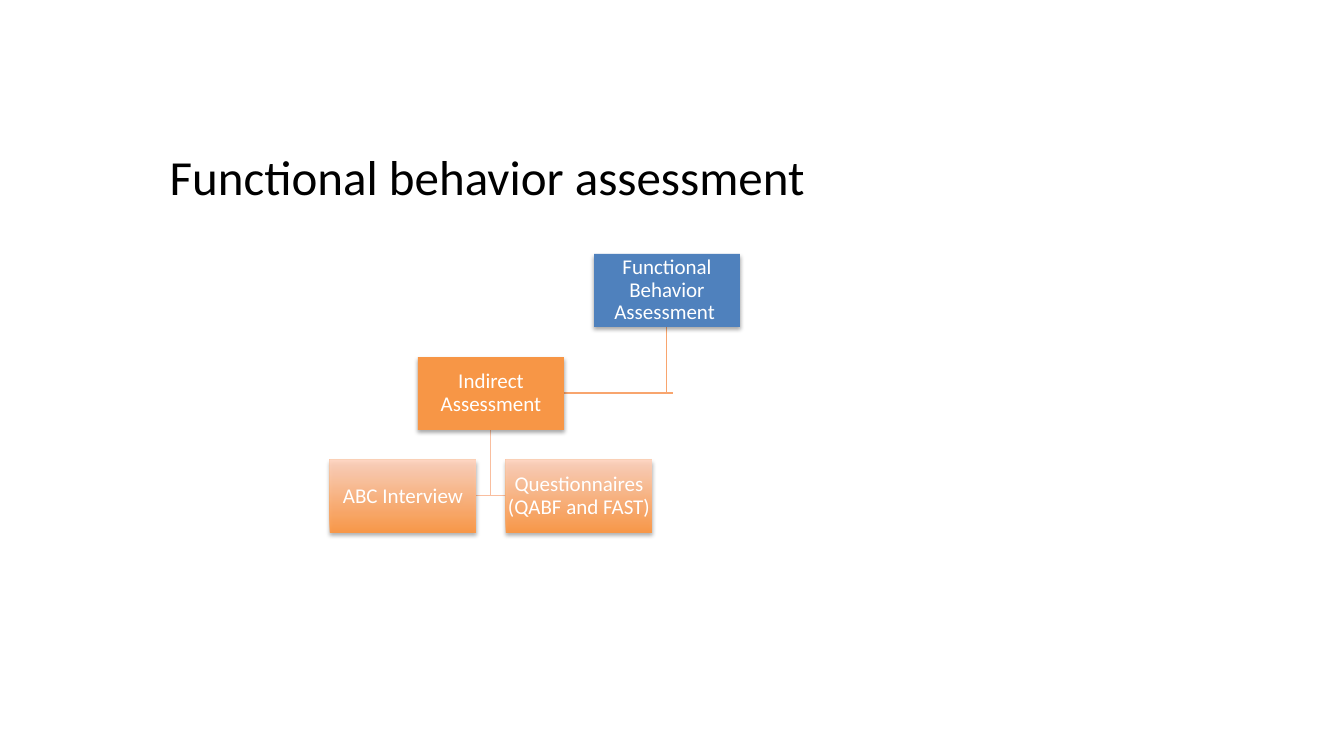
from pptx import Presentation
from pptx import util as u
from pptx.dml.color import RGBColor
from pptx.enum import shapes, text
from pptx.oxml import parse_xml
from pptx.oxml.ns import nsdecls, qn

PX = 914400 / 100.8
COLORS = {
    "title": "000000",
    "label": "FFFFFF",
    "root": "4F81BD",
    "indirect": "F79646",
    "leaf_bottom": "FF953E",
    "leaf_top": "FFD2BD",
    "root_link": "F8A56E",
    "leaf_link": "F9BE9F",
}
NODE_WIDTH, NODE_HEIGHT = 146, 73
HALF_COLUMN, LEVEL_STEP = 88, 103


def px(length):
    return u.Emu(round(length * PX))


def color(name):
    return RGBColor.from_string(COLORS[name])


def write_text(shape, words, size, color_name, anchor):
    frame = shape.text_frame
    frame.text = words
    frame.word_wrap = True
    frame.vertical_anchor = anchor
    paragraph = frame.paragraphs[0]
    paragraph.alignment = text.PP_ALIGN.CENTER
    font = paragraph.runs[0].font
    font.name, font.size = "Calibri", u.Pt(size)
    font.color.rgb = color(color_name)
    return frame


def add_title(slide, left, top, width, height):
    title = slide.shapes.add_textbox(px(left), px(top), px(width), px(height))
    write_text(title, "Functional behavior assessment", 35, "title", text.MSO_ANCHOR.TOP)


def fill_gradient(shape, bottom, top):
    shape.fill.gradient()
    shape.fill.gradient_angle = 90
    for stop, name in zip(shape.fill.gradient_stops, (bottom, top)):
        stop.color.rgb = color(name)
    for entry in shape._element.spPr.iter(qn("a:srgbClr")):
        entry.append(parse_xml(f'<a:alpha {nsdecls("a")} val="90000"/>'))


def add_soft_shadow(shape):
    shape.shadow.inherit = False
    effects = shape._element.spPr.find(qn("a:effectLst"))
    effects.append(parse_xml(
        f'<a:outerShdw {nsdecls("a")} blurRad="{u.Pt(3.1)}" dist="{u.Pt(1.8)}" '
        'dir="5400000" rotWithShape="0"><a:srgbClr val="000000">'
        '<a:alpha val="35000"/></a:srgbClr></a:outerShdw>'))


def add_node(slide, left, top, words, fill):
    node = slide.shapes.add_shape(
        shapes.MSO_SHAPE.RECTANGLE, px(left), px(top), px(NODE_WIDTH), px(NODE_HEIGHT))
    if fill == "leaf":
        fill_gradient(node, "leaf_bottom", "leaf_top")
    else:
        node.fill.solid()
        node.fill.fore_color.rgb = color(fill)
    node.line.fill.background()
    add_soft_shadow(node)
    frame = write_text(node, words, 15, "label", text.MSO_ANCHOR.MIDDLE)
    frame.margin_left = frame.margin_right = px(1)
    frame.margin_top = frame.margin_bottom = px(1)
    frame.paragraphs[0].line_spacing = 0.9


def add_elbow(slide, parent_left, parent_top, end_x, color_name):
    x = parent_left + NODE_WIDTH // 2
    end_y = parent_top + LEVEL_STEP + NODE_HEIGHT // 2
    builder = slide.shapes.build_freeform(x, parent_top + NODE_HEIGHT, scale=PX)
    builder.add_line_segments([(x, end_y), (end_x, end_y)], close=False)
    elbow = builder.convert_to_shape()
    elbow.fill.background()
    elbow.line.color.rgb = color(color_name)
    elbow.line.width = u.Pt(0.75)
    elbow.shadow.inherit = False


def add_hierarchy(slide, left, top):
    abc, indirect, questionnaires, root = (left + HALF_COLUMN * i for i in range(4))
    middle, bottom = top + LEVEL_STEP, top + 2 * LEVEL_STEP
    stub_end = root + NODE_WIDTH // 2 + 6

    add_elbow(slide, root, top, stub_end, "root_link")
    add_elbow(slide, indirect, middle, questionnaires, "leaf_link")
    add_elbow(slide, indirect, middle, abc + NODE_WIDTH, "leaf_link")
    add_elbow(slide, root, top, indirect + NODE_WIDTH, "root_link")

    add_node(slide, root, top, "Functional Behavior Assessment ", "root")
    add_node(slide, indirect, middle, "Indirect Assessment", "indirect")
    add_node(slide, abc, bottom, "ABC Interview", "leaf")
    add_node(slide, questionnaires, bottom, "Questionnaires (QABF and FAST)", "leaf")


def main():
    presentation = Presentation()
    presentation.slide_width, presentation.slide_height = px(1344), px(756)
    slide = presentation.slides.add_slide(presentation.slide_layouts[6])
    add_title(slide, -92, 142, 1159, 146)
    add_hierarchy(slide, 330, 254)
    presentation.save("out.pptx")


if __name__ == "__main__":
    main()
